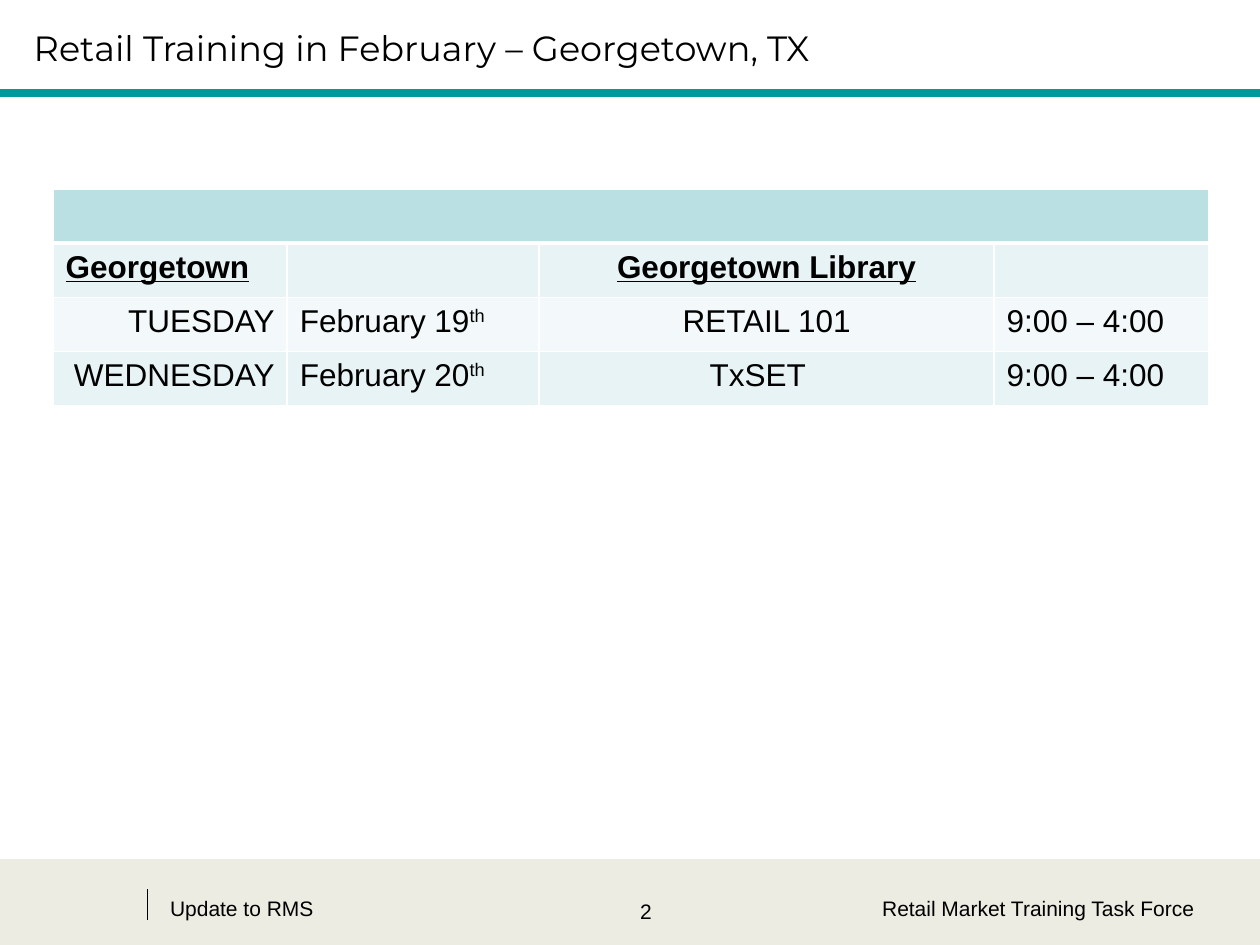
from lxml import etree
from pptx import Presentation
from pptx.dml.color import RGBColor
from pptx.enum import shapes, text
from pptx.oxml import ns
from pptx.util import Cm, Pt

COLORS = {
    "ink": "000000", "teal": "009999", "footer": "ECECE2", "border": "FFFFFF",
    "header": "BBE0E3", "odd": "E7F3F4", "even": "F3F9FA",
}
LEFT, CENTER, RIGHT = text.PP_ALIGN.LEFT, text.PP_ALIGN.CENTER, text.PP_ALIGN.RIGHT
COLUMN_WIDTHS = [4.72, 5.08, 9.17, 4.32]
COLUMN_ALIGNS = [RIGHT, LEFT, CENTER, LEFT]
ROWS = [
    ["", "", "", ""],
    ["Georgetown", "", "Georgetown Library", ""],
    ["TUESDAY", "February 19^th", "RETAIL 101", "9:00 – 4:00"],
    ["WEDNESDAY", "February 20^th", "TxSET", "9:00 – 4:00"],
]


def color(name):
    return RGBColor.from_string(COLORS[name])


def write(para, wording, align=LEFT, **formats):
    """Fill a paragraph; whatever follows a caret is raised."""
    para.alignment = align
    for index, part in enumerate(wording.split("^")):
        span = para.add_run()
        span.text = part
        span.font.color.rgb = color("ink")
        for key, value in ({"name": "Arial"} | formats).items():
            setattr(span.font, key, value)
        if index:
            span.font._element.set("baseline", "30000")


def add_label(page, box, wording, align=LEFT, anchor=text.MSO_ANCHOR.TOP, **formats):
    frame = page.shapes.add_textbox(*map(Cm, box)).text_frame
    frame.word_wrap = True
    frame.vertical_anchor = anchor
    write(frame.paragraphs[0], wording, align, **formats)


def add_rule(page, start, end, name, width):
    rule = page.shapes.add_connector(
        shapes.MSO_CONNECTOR.STRAIGHT, *map(Cm, start + end))
    rule.line.color.rgb = color(name)
    rule.line.width = Pt(width)
    etree.SubElement(rule._element.spPr, ns.qn("a:effectLst"))


def add_title(page, left, top, width, height):
    add_label(page, (left + 0.43, top, width - 1.27, height),
              "Retail Training in February – Georgetown, TX",
              anchor=text.MSO_ANCHOR.MIDDLE, name="Montserrat", size=Pt(20))
    rule_top = top + height - 0.03
    add_rule(page, (left, rule_top), (left + width, rule_top), "teal", 4.5)


def add_footer(page, left, top, width, height):
    band = page.shapes.add_shape(
        shapes.MSO_SHAPE.RECTANGLE, *map(Cm, (left, top, width, height)))
    band.shadow.inherit = False
    band.fill.solid()
    band.fill.fore_color.rgb = color("footer")
    band.line.fill.background()
    add_rule(page, (left + 2.97, top + 0.61), (left + 2.97, top + 1.22), "ink", 0.75)
    labels = [
        (3.18, 0.61, 5.92, "Update to RMS", LEFT),
        (9.53, 0.66, 6.98, "2", CENTER),
        (17.35, 0.61, 6.98, "Retail Market Training Task Force", RIGHT),
    ]
    for across, down, wide, wording, align in labels:
        add_label(page, (left + across, top + down, wide, 1.27), wording, align,
                  size=Pt(12))


def set_borders(cell, bottom):
    """Draw white cell borders, with the bottom one of the given width."""
    properties = cell._tc.get_or_add_tcPr()
    widths = {"lnL": 1, "lnR": 1, "lnT": 1, "lnB": bottom}
    for index, (tag, width) in enumerate(widths.items()):
        line = etree.Element(ns.qn(f"a:{tag}"), w=str(Pt(width)))
        fill = etree.SubElement(line, ns.qn("a:solidFill"))
        etree.SubElement(fill, ns.qn("a:srgbClr"), val=COLORS["border"])
        properties.insert(index, line)


def add_schedule(page, left, top, width, height):
    table = page.shapes.add_table(
        len(ROWS), len(COLUMN_WIDTHS), *map(Cm, (left, top, width, height))).table
    for column, wide in zip(table.columns, COLUMN_WIDTHS):
        column.width = Cm(wide)
    for r, (row, wordings) in enumerate(zip(table.rows, ROWS)):
        row.height = Cm(height / len(ROWS))
        heading = r == 1
        fill = "header" if r == 0 else "odd" if r % 2 else "even"
        for c, (cell, wording) in enumerate(zip(row.cells, wordings)):
            cell.fill.solid()
            cell.fill.fore_color.rgb = color(fill)
            set_borders(cell, 1 if r else 3)
            if wording:
                align = LEFT if heading and c == 0 else COLUMN_ALIGNS[c]
                write(cell.text_frame.paragraphs[0], wording, align,
                      size=Pt(18), bold=heading, underline=heading)
    table.cell(0, 0).merge(table.cell(0, len(COLUMN_WIDTHS) - 1))
    table.cell(3, 2).margin_right = Cm(0.61)


def main():
    deck = Presentation()
    deck.slide_width, deck.slide_height = Cm(25.4), Cm(19.05)
    page = deck.slides.add_slide(deck.slide_layouts[6])
    add_footer(page, 0, 17.32, 25.4, 1.73)
    add_title(page, 0, 0, 25.4, 1.91)
    add_schedule(page, 1.07, 3.81, sum(COLUMN_WIDTHS), 4.37)
    deck.save("out.pptx")


if __name__ == "__main__":
    main()
